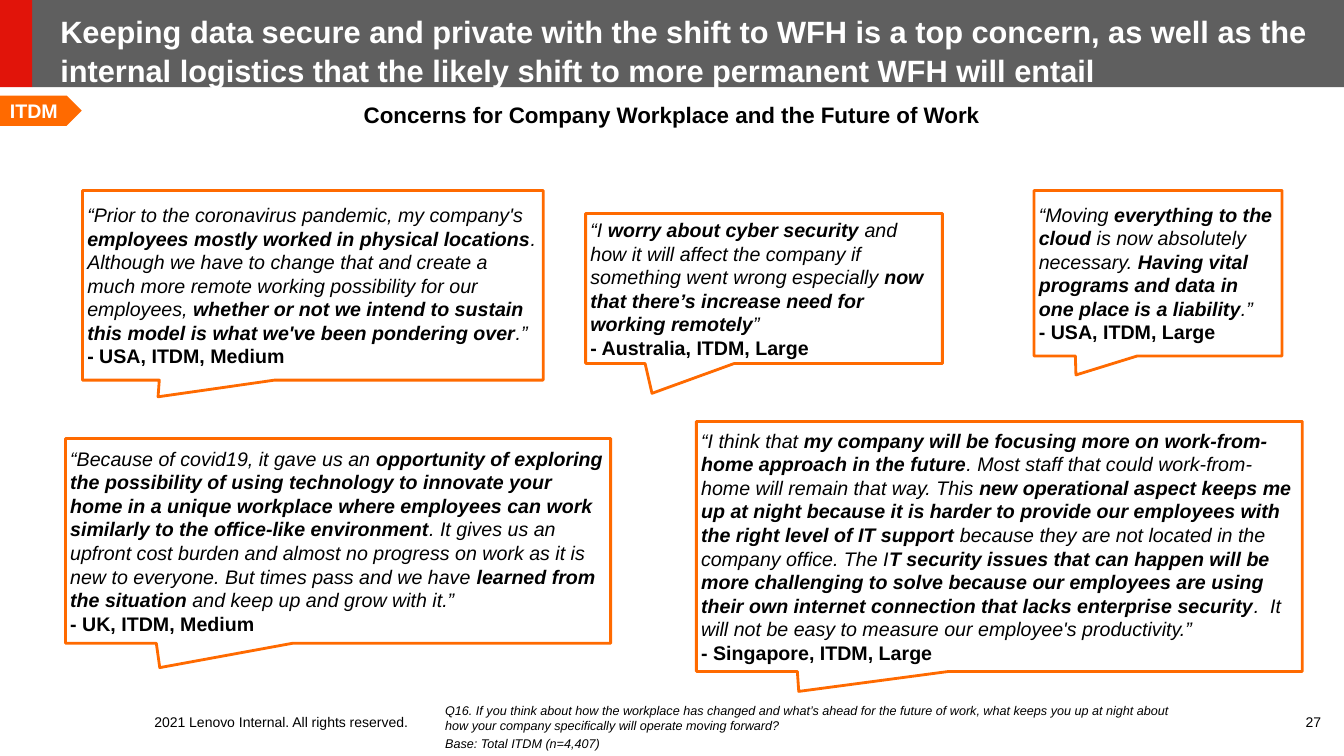
"""Build the slide of customer concerns about the future of work."""
from pptx import Presentation
from pptx.dml.color import RGBColor
from pptx.enum.shapes import MSO_SHAPE
from pptx.enum.text import MSO_ANCHOR, MSO_AUTO_SIZE, PP_ALIGN
from pptx.util import Cm, Pt

RECT, TAG, CALL = MSO_SHAPE.RECTANGLE, MSO_SHAPE.PENTAGON, MSO_SHAPE.RECTANGULAR_CALLOUT
TOP, MID, LOW = MSO_ANCHOR.TOP, MSO_ANCHOR.MIDDLE, MSO_ANCHOR.BOTTOM
LEFT, MIDDLE = PP_ALIGN.LEFT, PP_ALIGN.CENTER
FIXED = MSO_AUTO_SIZE.NONE
FONT, BLACK, WHITE = "Arial", "000000", "FFFFFF"
GREY, RED, ORANGE = "5F5F5F", "E1140A", "FF6A00"
WIDE, PAD = (0.25, 0.13), (0.12, 0.12)

TITLE = ("Keeping data secure and private with the shift to WFH is a top concern, as well as "
         "the internal logistics that the likely shift to more permanent WFH will entail")
HEAD = "Concerns for Company Workplace and the Future of Work"
RIGHTS = "2021 Lenovo Internal. All rights reserved."
NOTES = [
    "Q16. If you think about how the workplace has changed and what’s ahead for the future of "
    "work, what keeps you up at night about how your company specifically will operate moving "
    "forward?",
    "Base: Total ITDM (n=4,407)",
]
# Asterisks switch bold on and off.
QUOTES = [
    ((2.08, 4.8, 11.61, 4.78), (-0.336, 0.588), "USA, ITDM, Medium",
     "“Prior to the coronavirus pandemic, my company's *employees mostly worked in physical "
     "locations*. Although we have to change that and create a much more remote working "
     "possibility for our employees, *whether or not we intend to sustain this model is what "
     "we've been pondering over*.”"),
    ((1.65, 11.05, 13.74, 5.16), (-0.327, 0.619), "UK, ITDM, Medium",
     "“Because of covid19, it gave us an *opportunity of exploring the possibility of using "
     "technology to innovate your home in a unique workplace where employees can work similarly "
     "to the office-like environment*. It gives us an upfront cost burden and almost no progress "
     "on work as it is new to everyone. But times pass and we have *learned from the situation "
     "*and keep up and grow with it.”"),
    ((17.55, 10.62, 15.27, 6.3), (-0.331, 0.58), "Singapore, ITDM, Large",
     "“I think that *my company will be focusing more on work-from-home approach in the future*. "
     "Most staff that could work-from-home will remain that way. This *new operational aspect "
     "keeps me up at night because it is harder to provide our employees with the right level of "
     "IT support *because they are not located in the company office. The I*T security issues "
     "that can happen will be more challenging to solve because our employees are using their "
     "own internet connection that lacks enterprise security*.  It will not be easy to measure "
     "our employee's productivity.”"),
    ((26.06, 4.8, 6.25, 4.17), (-0.331, 0.615), "USA, ITDM, Large",
     "“Moving *everything to the cloud *is now absolutely necessary. *Having vital programs and "
     "data in one place is a liability*.”"),
    ((14.76, 5.38, 8.99, 3.78), (-0.314, 0.699), "Australia, ITDM, Large",
     "“I *worry about cyber security *and how it will affect the company if something went wrong "
     "especially *now that there’s increase need for working remotely*”"),
]


def rgb(code):
    return RGBColor.from_string(code)


def style(font, size, color=BLACK, bold=False, italic=False):
    font.name, font.size, font.bold, font.italic = FONT, Pt(size), bold, italic
    font.color.rgb = rgb(color)


def frame(shape, anchor, pad):
    body = shape.text_frame
    body.word_wrap, body.auto_size, body.vertical_anchor = True, FIXED, anchor
    body.margin_left = body.margin_right = Cm(pad[0])
    body.margin_top = body.margin_bottom = Cm(pad[1])
    return body


def write(shape, lines, size, color=BLACK, bold=False, italic=False,
          align=LEFT, anchor=MID, pad=(0, 0), gap=0):
    body = frame(shape, anchor, pad)
    body.text = "\n".join(lines)
    for i, para in enumerate(body.paragraphs):
        para.alignment = align
        para.space_before = Pt(gap if i else 0)
        for run in para.runs:
            style(run.font, size, color, bold, italic)


def block(slide, kind, box, fill=None, line=None):
    shape = slide.shapes.add_shape(kind, *map(Cm, box))
    shape.shadow.inherit = False
    if fill:
        shape.fill.solid()
        shape.fill.fore_color.rgb = rgb(fill)
    else:
        shape.fill.background()
    if line:
        shape.line.color.rgb = rgb(line)
        shape.line.width = Pt(2)
    else:
        shape.line.fill.background()
    return shape


def label(slide, box, lines, size, **look):
    write(slide.shapes.add_textbox(*map(Cm, box)), lines, size, **look)


def quote(slide, box, tip, source, words):
    shape = block(slide, CALL, box, line=ORANGE)
    for i, value in enumerate(tip):
        shape.adjustments[i] = value
    body = frame(shape, MID, PAD)
    first, last = body.paragraphs[0], body.add_paragraph()
    first.alignment = last.alignment = LEFT
    for i, part in enumerate(words.split("*")):
        run = first.add_run()
        run.text = part
        style(run.font, 14, bold=i % 2 == 1, italic=True)
    last.text = "- " + source
    style(last.runs[0].font, 14, bold=True)


def main():
    deck = Presentation()
    deck.slide_width, deck.slide_height = Cm(33.87), Cm(19.05)
    slide = deck.slides.add_slide(deck.slide_layouts[5])
    title = slide.shapes.title
    block(slide, RECT, (0.81, 0, 33.06, 2.2), GREY)
    block(slide, RECT, (0, 0, 0.81, 2.2), RED)
    slide.shapes._spTree.append(title._element)
    title.left, title.top, title.width, title.height = map(Cm, (1.52, 0.46, 31.57, 1.57))
    write(title, [TITLE], 22, WHITE, bold=True)
    title.text_frame.paragraphs[0].line_spacing = 1.07

    label(slide, (7.8, 2.41, 18.26, 0.94), [HEAD], 16, bold=True,
          align=MIDDLE, anchor=TOP, pad=WIDE)
    tag = block(slide, TAG, (0, 2.41, 2.06, 0.76), ORANGE)
    write(tag, ["ITDM"], 14, WHITE, bold=True, pad=WIDE)
    for item in QUOTES:
        quote(slide, *item)

    label(slide, (3.89, 17.98, 6.71, 0.43), [RIGHTS], 10)
    label(slide, (10.97, 17.48, 18.77, 1.57), NOTES, 9, italic=True,
          anchor=LOW, pad=WIDE, gap=1.8)
    label(slide, (32.49, 17.98, 1.22, 0.43), ["27"], 10, align=MIDDLE)
    deck.save("out.pptx")


if __name__ == "__main__":
    main()
